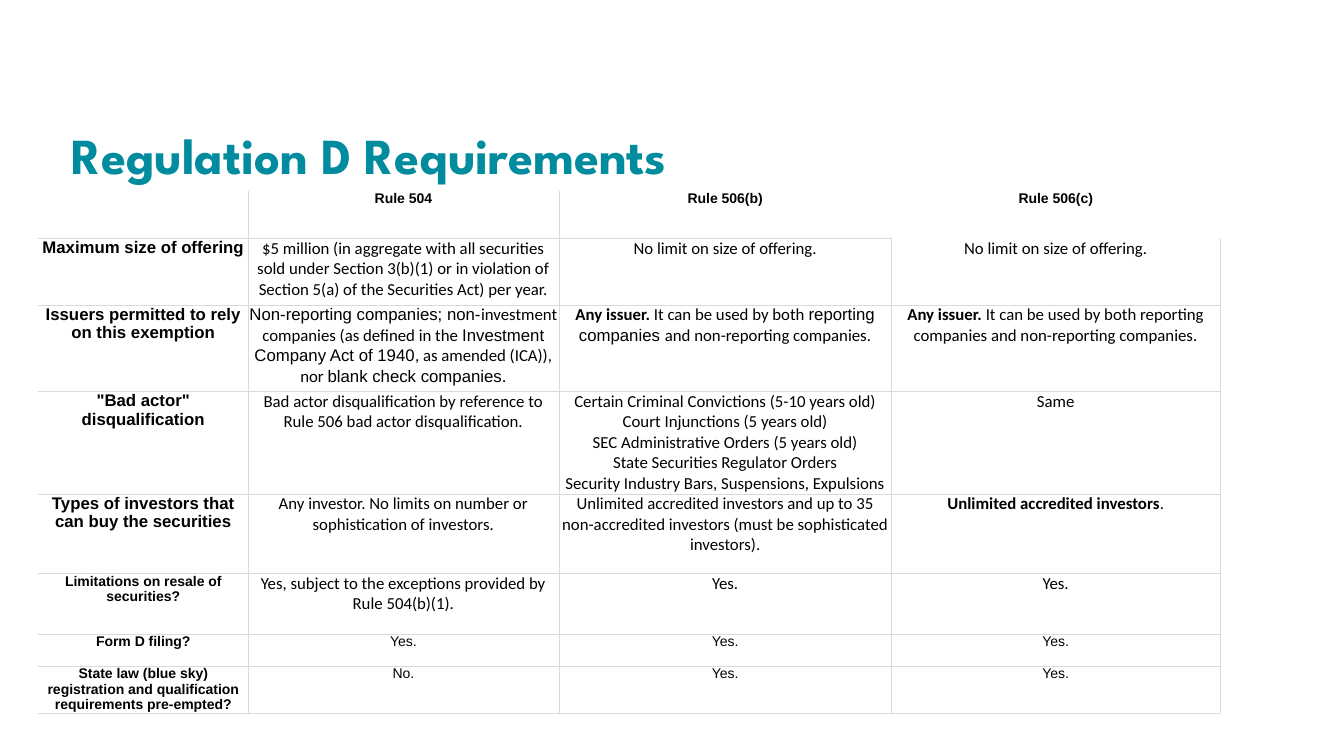
"""Build a slide with a table comparing the Regulation D exemptions."""
from pptx import Presentation
from pptx.dml.color import RGBColor
from pptx.enum.text import MSO_ANCHOR, MSO_AUTO_SIZE, PP_ALIGN
from pptx.oxml.ns import qn
from pptx.util import Cm, Pt
from lxml import etree

CENTER = PP_ALIGN.CENTER
LEFT = PP_ALIGN.LEFT
BOTTOM = MSO_ANCHOR.BOTTOM
NO_AUTOFIT = MSO_AUTO_SIZE.NONE

COLORS = {"title": "008C9E", "text": "000000", "border": "DADADA"}
BORDER_WIDTH = Pt(0.38)
SIDES = "LRTB"

TITLE = "Regulation D Requirements"
BOLD = {"bold": True}
ARIAL = {"font": "Arial"}

HEADER = {"size": 10, "font": "Arial", "bold": True}
LARGE_LABEL = {"size": 12, "font": "Arial", "bold": True}
LARGE_BODY = {"size": 12, "font": "Calibri"}
SMALL_BODY = {"size": 10, "font": "Arial"}

RULES = ["", "Rule 504", "Rule 506(b)", "Rule 506(c)"]
ANY_ISSUER = ("Any issuer. ", BOLD)

REQUIREMENTS = [
    (HEADER, HEADER, 1.19, RULES),
    (LARGE_LABEL, LARGE_BODY, 1.68, [
        "Maximum size of offering",
        "$5 million (in aggregate with all securities sold under Section 3(b)(1) "
        "or in violation of Section 5(a) of the Securities Act) per year.",
        "No limit on size of offering.",
        "No limit on size of offering.",
    ]),
    (LARGE_LABEL, LARGE_BODY, 2.18, [
        "Issuers permitted to rely on this exemption",
        [[("Non-reporting companies; non-", ARIAL),
          ("investment companies (as defined in the ", {}),
          ("Investment Company Act of 1940", ARIAL),
          (", as amended (ICA)), nor ", {}),
          ("blank check companies", ARIAL),
          (".", {})]],
        [[ANY_ISSUER,
          ("It can be used by both ", {}),
          ("reporting companies ", ARIAL),
          ("and non-reporting companies.", {})]],
        [[ANY_ISSUER,
          ("It can be used by both reporting companies and "
           "non-reporting companies.", {})]],
    ]),
    (LARGE_LABEL, LARGE_BODY, 2.36, [
        '"Bad actor" disqualification',
        "Bad actor disqualification by reference to Rule 506 bad actor "
        "disqualification.",
        ["Certain Criminal Convictions (5-10 years old)",
         "Court Injunctions (5 years old)",
         "SEC Administrative Orders (5 years old)",
         "State Securities Regulator Orders",
         "Security Industry Bars, Suspensions, Expulsions"],
        "Same",
    ]),
    (LARGE_LABEL, LARGE_BODY, 2.01, [
        "Types of investors that can buy the securities",
        "Any investor. No limits on number or sophistication of investors.",
        "Unlimited accredited investors and up to 35 non-accredited investors "
        "(must be sophisticated investors).",
        [[("Unlimited accredited investors", BOLD), (".", {})]],
    ]),
    (HEADER, LARGE_BODY, 1.52, [
        "Limitations on resale of securities?",
        "Yes, subject to the exceptions provided by Rule 504(b)(1).",
        "Yes.",
        "Yes.",
    ]),
    (HEADER, SMALL_BODY, 0.81, ["Form D filing?", "Yes.", "Yes.", "Yes."]),
    (HEADER, SMALL_BODY, 1.19, [
        "State law (blue sky) registration and qualification requirements "
        "pre-empted?",
        "No.",
        "Yes.",
        "Yes.",
    ]),
]
COLUMN_WIDTHS = [5.28, 7.83, 8.39, 8.27]
TABLE_LEFT, TABLE_TOP = 0.97, 4.81

HEADER_BORDERS = ["RB", "LRB", "LB", ""]
LABEL_BORDERS = "RTB"
OPEN_TOP_CELL = (1, 3)


def write_text(frame, content, align=CENTER, color="text", **base):
    """Write a string, or a list of paragraphs made of formatted runs."""
    paragraphs = [content] if isinstance(content, str) else content
    for index, runs in enumerate(paragraphs):
        paragraph = frame.add_paragraph() if index else frame.paragraphs[0]
        paragraph.alignment = align
        for text, changes in [(runs, {})] if isinstance(runs, str) else runs:
            style = {"bold": False, **base, **changes}
            run = paragraph.add_run()
            run.text = text
            run.font.size = Pt(style["size"])
            run.font.name = style["font"]
            run.font.bold = style["bold"]
            run.font.color.rgb = RGBColor.from_string(COLORS[color])


def visible_sides(row, column):
    """Return the letters of the cell sides that carry a line."""
    if row == 0:
        return HEADER_BORDERS[column]
    if column == 0:
        return LABEL_BORDERS
    return "LRB" if (row, column) == OPEN_TOP_CELL else SIDES


def draw_borders(cell, sides):
    """Line the given sides of a cell and clear the others."""
    properties = cell._tc.get_or_add_tcPr()
    for position, side in enumerate(SIDES):
        line = etree.Element(qn(f"a:ln{side}"), w=str(int(BORDER_WIDTH)))
        if side in sides:
            fill = etree.SubElement(line, qn("a:solidFill"))
            etree.SubElement(fill, qn("a:srgbClr"), val=COLORS["border"])
        else:
            etree.SubElement(line, qn("a:noFill"))
        properties.insert(position, line)


def add_title(slide):
    """Place and format the title placeholder."""
    title = slide.shapes.title
    title.left, title.top = Cm(1.55), Cm(2.46)
    title.width, title.height = Cm(29.21), Cm(2.34)
    frame = title.text_frame
    frame.word_wrap = True
    frame.auto_size = NO_AUTOFIT
    frame.vertical_anchor = BOTTOM
    write_text(frame, TITLE, align=LEFT, color="title",
               size=36, font="League Spartan", bold=True)
    frame.paragraphs[0].line_spacing = 0.9


def add_requirements(slide):
    """Add the table of requirements."""
    total_height = sum(height for _, _, height, _ in REQUIREMENTS)
    table = slide.shapes.add_table(
        len(REQUIREMENTS), len(RULES), Cm(TABLE_LEFT), Cm(TABLE_TOP),
        Cm(sum(COLUMN_WIDTHS)), Cm(total_height)).table
    table.horz_banding = False
    for column, width in enumerate(COLUMN_WIDTHS):
        table.columns[column].width = Cm(width)
    for row, (label_style, body_style, height, entries) in enumerate(REQUIREMENTS):
        table.rows[row].height = Cm(height)
        for column, entry in enumerate(entries):
            cell = table.cell(row, column)
            cell.margin_left = cell.margin_right = Cm(0.03)
            cell.margin_top = cell.margin_bottom = 0
            cell.fill.background()
            draw_borders(cell, visible_sides(row, column))
            if entry:
                write_text(cell.text_frame, entry,
                           **(body_style if column else label_style))


def main():
    """Build and save the presentation."""
    presentation = Presentation()
    presentation.slide_width, presentation.slide_height = Cm(33.87), Cm(19.05)
    slide = presentation.slides.add_slide(presentation.slide_layouts[5])
    add_title(slide)
    add_requirements(slide)
    presentation.save("out.pptx")


if __name__ == "__main__":
    main()
